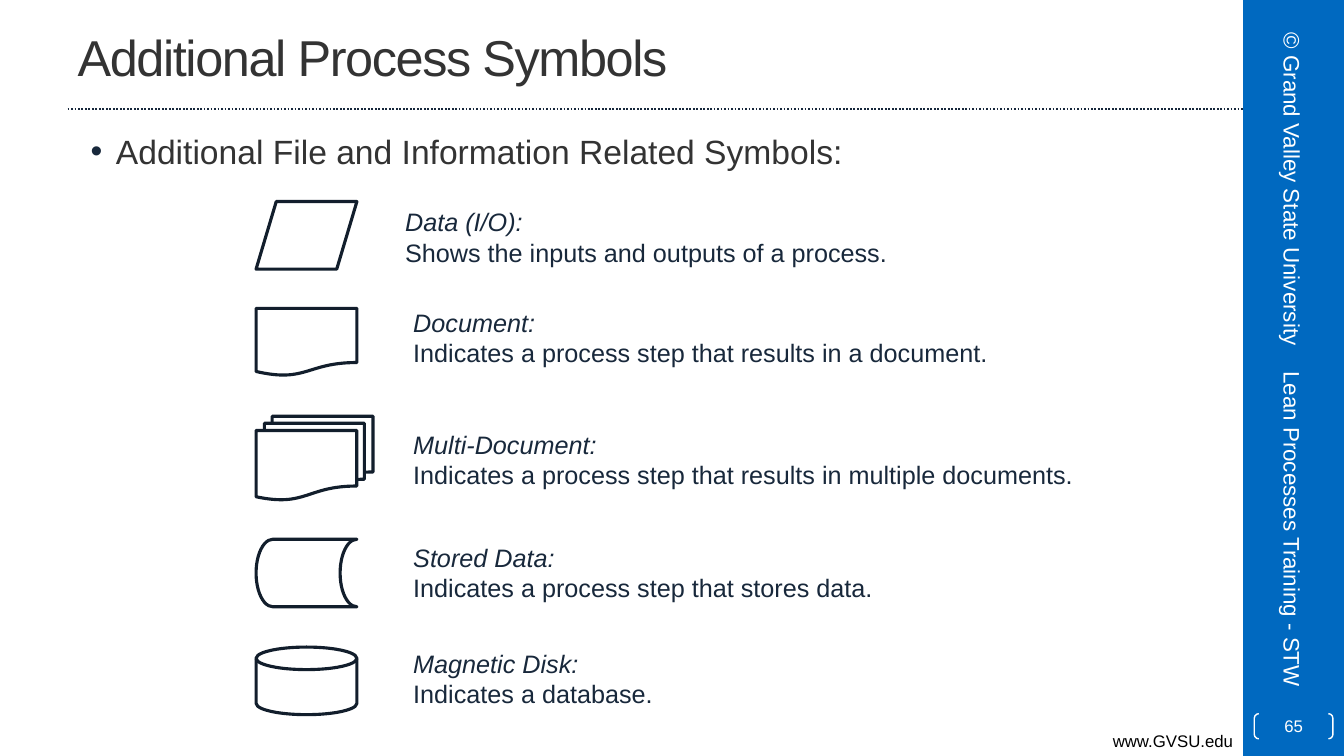
from lxml.etree import SubElement
from pptx import Presentation
from pptx.dml.color import RGBColor
from pptx.enum.dml import MSO_LINE
from pptx.enum.shapes import MSO_CONNECTOR, MSO_SHAPE
from pptx.enum.text import MSO_ANCHOR, MSO_AUTO_SIZE, PP_ALIGN
from pptx.oxml.ns import qn
from pptx.util import Inches, Pt

WIDTH, HEIGHT = 13.33, 7.5
BAND_LEFT = 12.33
MARGIN = 0.67
CONTENT_WIDTH = 11.11
RULE_TOP = 1.08
FONT = "Arial"
COLORS = {
    "band": "0069C0",
    "rule": "17273B",
    "title": "333333",
    "ink": "18283B",
    "outline": "121E2C",
    "black": "000000",
    "white": "FFFFFF",
}
# symbol, symbol top, symbol size, text left, text top, name, meaning
SYMBOLS = [
    (MSO_SHAPE.FLOWCHART_DATA, 2, (1, 0.67), 3.92, 2,
     "Data (I/O):", "Shows the inputs and outputs of a process."),
    (MSO_SHAPE.FLOWCHART_DOCUMENT, 3.06, (1, 0.67), 4, 3,
     "Document:", "Indicates a process step that results in a document."),
    (MSO_SHAPE.FLOWCHART_MULTIDOCUMENT, 4.13, (1.16, 0.83), 4, 4.21,
     "Multi-Document:", "Indicates a process step that results in multiple documents."),
    (MSO_SHAPE.FLOWCHART_STORED_DATA, 5.35, (1, 0.67), 4, 5.33,
     "Stored Data:", "Indicates a process step that stores data."),
    (MSO_SHAPE.FLOWCHART_MAGNETIC_DISK, 6.42, (1, 0.67), 4, 6.38,
     "Magnetic Disk:", "Indicates a database."),
]
SYMBOL_LEFT = 2.54
TEXT_RIGHT = 10.92


def color(name):
    return RGBColor.from_string(COLORS[name])


def inches(*lengths):
    return [Inches(length) for length in lengths]


def place(shape, box):
    shape.left, shape.top, shape.width, shape.height = inches(*box)


def write(paragraph, text, size, ink, italic=False, align=PP_ALIGN.LEFT, spacing=None):
    paragraph.alignment = align
    run = paragraph.add_run()
    run.text = text
    font = run.font
    font.name, font.size, font.italic = FONT, Pt(size), italic
    font.color.rgb = color(ink)
    if spacing is not None:
        run._r.get_or_add_rPr().set("spc", str(spacing))


def add_text_box(shapes, box, lines, size, ink, anchor=MSO_ANCHOR.TOP, rotation=0,
                 align=PP_ALIGN.LEFT):
    """Each line is a (text, italic) pair."""
    text_box = shapes.add_textbox(*inches(*box))
    text_box.rotation = rotation
    frame = text_box.text_frame
    frame.word_wrap = True
    frame.vertical_anchor = anchor
    for index, (text, italic) in enumerate(lines):
        paragraph = frame.add_paragraph() if index else frame.paragraphs[0]
        write(paragraph, text, size, ink, italic=italic, align=align)


def add_outlined(shapes, kind, box, ink, weight):
    shape = shapes.add_shape(kind, *inches(*box))
    shape.shadow.inherit = False
    shape.fill.background()
    shape.line.color.rgb = color(ink)
    shape.line.width = Pt(weight)
    return shape


def add_side_band(slide, box):
    left, top, width, height = box
    band = slide.shapes.add_shape(MSO_SHAPE.RECTANGLE, *inches(*box))
    band.shadow.inherit = False
    band.fill.solid()
    band.fill.fore_color.rgb = color("band")
    band.line.fill.background()

    length, thickness = 3.42, 0.53
    label_left = left + width / 2 - length / 2 - 0.01
    labels = [
        ("© Grand Valley State University", 1.61, PP_ALIGN.CENTER),
        ("Lean Processes Training - STW", 1.61 + length, PP_ALIGN.LEFT),
    ]
    for text, label_top, align in labels:
        add_text_box(slide.shapes, (label_left, top + label_top, length, thickness),
                     [(text, False)], 16, "white", MSO_ANCHOR.MIDDLE, 90, align)

    number = add_outlined(slide.shapes, MSO_SHAPE.DOUBLE_BRACKET,
                          (left + 0.11, top + height - 0.42, 0.78, 0.25), "white", 1)
    number.adjustments[0] = 0.18
    frame = number.text_frame
    frame.margin_left = frame.margin_right = frame.margin_top = frame.margin_bottom = 0
    frame.vertical_anchor = MSO_ANCHOR.MIDDLE
    write(frame.paragraphs[0], "65", 12, "white", align=PP_ALIGN.CENTER)


def add_header(slide, box):
    left, top, width, height = box
    place(slide.shapes.title, box)
    frame = slide.shapes.title.text_frame
    frame.auto_size = MSO_AUTO_SIZE.NONE
    frame.vertical_anchor = MSO_ANCHOR.MIDDLE
    write(frame.paragraphs[0], "Additional Process Symbols", 36, "title", spacing=-100)

    rule = slide.shapes.add_connector(
        MSO_CONNECTOR.STRAIGHT, *inches(left, top + height, BAND_LEFT, top + height))
    rule.line.color.rgb = color("rule")
    rule.line.width = Pt(1.25)
    rule.line.dash_style = MSO_LINE.ROUND_DOT
    SubElement(rule._element.spPr, qn("a:effectLst"))


def add_body(slide, box):
    body = slide.placeholders[1]
    place(body, box)
    body.text_frame.auto_size = MSO_AUTO_SIZE.NONE
    paragraph = body.text_frame.paragraphs[0]
    properties = paragraph._p.get_or_add_pPr()
    properties.set("marL", str(Inches(0.38)))
    properties.set("indent", str(Inches(-0.25)))
    bullet_color = SubElement(properties, qn("a:buClr"))
    SubElement(bullet_color, qn("a:srgbClr"), val=COLORS["ink"])
    SubElement(properties, qn("a:buFont"), typeface=FONT)
    SubElement(properties, qn("a:buChar"), char="•")
    paragraph.space_before = Pt(0)
    write(paragraph, "Additional File and Information Related Symbols:", 24, "title")


def add_symbol_list(slide):
    group = slide.shapes.add_group_shape()
    for kind, top, size, text_left, text_top, name, meaning in SYMBOLS:
        add_outlined(group.shapes, kind, (SYMBOL_LEFT, top, *size), "outline", 2.25)
        add_text_box(group.shapes, (text_left, text_top, TEXT_RIGHT - text_left, 0.71),
                     [(name, True), (meaning, False)], 18, "ink")


def main():
    presentation = Presentation()
    presentation.slide_width, presentation.slide_height = inches(WIDTH, HEIGHT)
    slide = presentation.slides.add_slide(presentation.slide_layouts[1])
    add_side_band(slide, (BAND_LEFT, 0, WIDTH - BAND_LEFT, HEIGHT))
    add_header(slide, (MARGIN, 0.03, CONTENT_WIDTH, RULE_TOP - 0.03))
    add_body(slide, (MARGIN, 1.25, CONTENT_WIDTH, 6))
    add_symbol_list(slide)
    add_text_box(slide.shapes, (0, HEIGHT - 0.3, BAND_LEFT, 0.3),
                 [("www.GVSU.edu", False)], 12, "black", align=PP_ALIGN.RIGHT)
    presentation.save("out.pptx")


if __name__ == "__main__":
    main()
